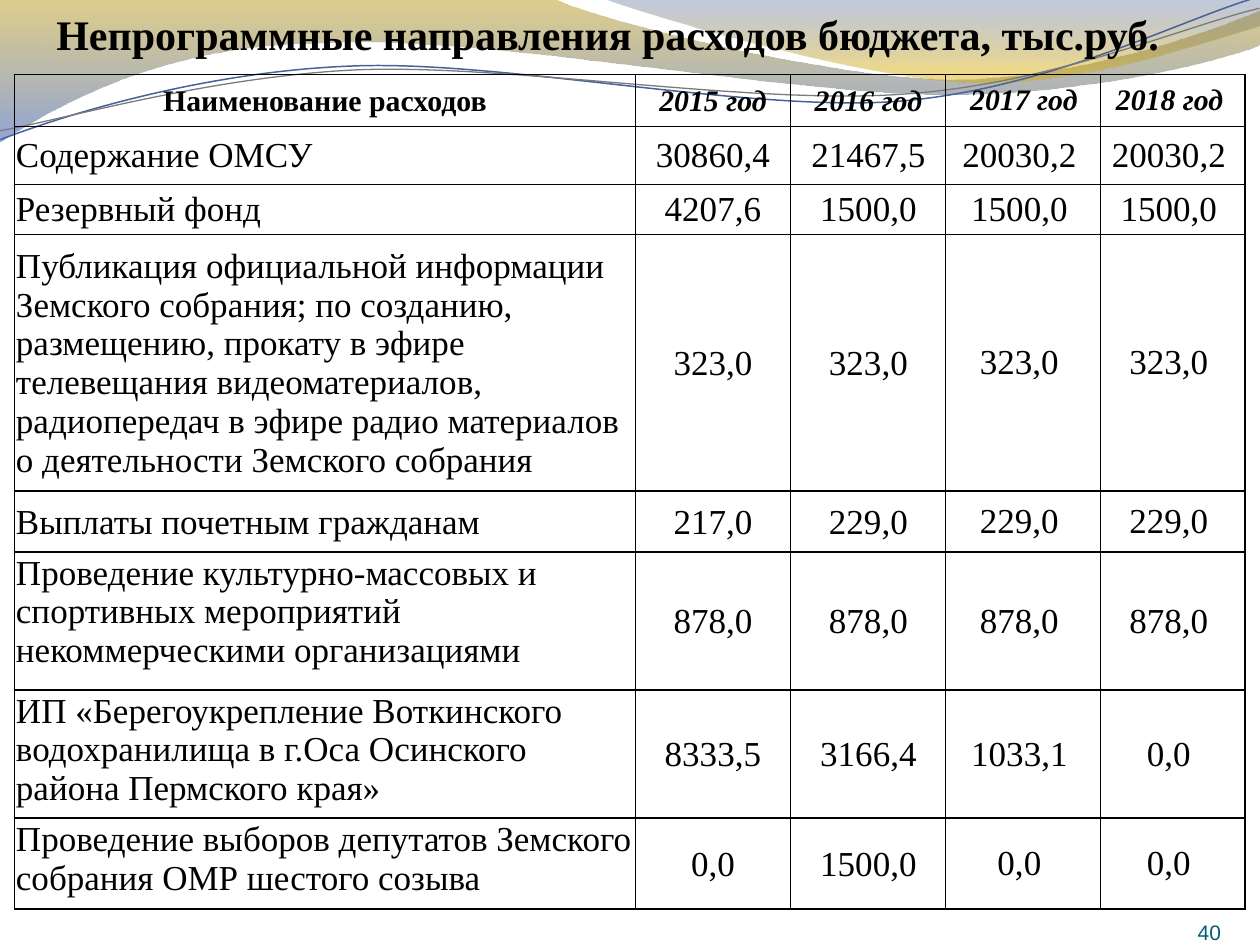
from lxml import etree
from pptx import Presentation
from pptx import util as u
from pptx.dml.color import RGBColor
from pptx.enum import text
from pptx.oxml.ns import qn

SCALE = 914400 / 126
SERIF = "Times New Roman"
CENTER, LEFT, RIGHT = text.PP_ALIGN.CENTER, text.PP_ALIGN.LEFT, text.PP_ALIGN.RIGHT
MIDDLE, TOP, BOTTOM = text.MSO_ANCHOR.MIDDLE, text.MSO_ANCHOR.TOP, text.MSO_ANCHOR.BOTTOM

WAVES = [
    ([(0, -1), (554, -1),
      (600, 21, 837, 79, 955, 79), (1075, 79, 1207, 33, 1260, 11),
      (1261, 45),
      (1239, 55, 1096, 96, 940, 94), (784, 94, 481, 35, 324, 43),
      (163, 44, 58, 105, -1, 142), (0, -1)],
     [(0, "B69000", 45), (1, "3359B7", 55)]),
    ([(604, -1),
      (641, 14, 859, 78, 969, 82), (1079, 87, 1211, 40, 1260, 26),
      (1260, 0), (604, -1)],
     [(0, "324C8D", 30), (0.8, "D9AC00", 45)]),
]
STRANDS = [
    ([(-2, 110), (58, 90, 199, 52, 350, 53),
      (499, 53, 745, 118, 896, 114), (1049, 109, 1184, 45, 1260, 27)],
     "48609B", 0.85),
    ([(-2, 101), (57, 94, 207, 57, 357, 57),
      (509, 58, 750, 111, 902, 107), (1052, 104, 1187, 52, 1262, 38)],
     "7A7A7A", 0.75),
]
COLS = [621, 155, 156, 155, 144]
ROWS = [52, 58, 50, 257, 61, 138, 128, 91]
DATA = [
    ["Наименование расходов", "2015 год", "2016 год", "2017 год", "2018 год "],
    ["Содержание ОМСУ", "30860,4", "21467,5", "20030,2", "20030,2"],
    ["Резервный фонд", "4207,6", "1500,0", "1500,0", "1500,0"],
    ["Публикация официальной информации Земского собрания; по созданию, "
     "размещению, прокату в эфире телевещания видеоматериалов, радиопередач "
     "в эфире радио материалов о деятельности Земского собрания",
     "323,0", "323,0", "323,0", "323,0"],
    ["Выплаты почетным гражданам", "217,0", "229,0", "229,0", "229,0"],
    ["Проведение культурно-массовых и спортивных мероприятий "
     "некоммерческими организациями", "878,0", "878,0", "878,0", "878,0"],
    ["ИП «Берегоукрепление Воткинского водохранилища в г.Оса Осинского "
     "района Пермского края»", "8333,5", "3166,4", "1033,1", "0,0"],
    ["Проведение выборов депутатов Земского собрания ОМР шестого созыва",
     "0,0", "1500,0", "0,0", "0,0"],
]


def px(n):
    return u.Emu(round(n * SCALE))


def rgb(value):
    return RGBColor.from_string(value)


def set_all(obj, values):
    for name, value in values.items():
        setattr(obj, name, value)


def write(p, words, align, color, **fmt):
    p.alignment = align
    r = p.add_run()
    r.text = words
    set_all(r.font, fmt)
    r.font.color.rgb = rgb(color)


def add_curve(shapes, box, steps, close):
    x, y = box
    pts = [(px(x + step[k]), px(y + step[k + 1]))
           for step in steps for k in range(0, len(step), 2)]
    fb = shapes.build_freeform(*pts[0], scale=1.0)
    fb.add_line_segments(pts[1:], close=close)
    sp = fb.convert_to_shape()
    sp.shadow.inherit = False
    lines = iter(list(sp._element.iter(qn("a:lnTo"))))
    for step in steps[1:]:
        ln = next(lines)
        if len(step) == 6:
            bez = etree.Element(qn("a:cubicBezTo"))
            ln.addprevious(bez)
            for part in (ln, next(lines), next(lines)):
                bez.append(part[0])
                part.getparent().remove(part)
    return sp


def add_waves(s, box):
    for steps, stops in WAVES:
        sp = add_curve(s.shapes, box, steps, True)
        sp.line.fill.background()
        sp.fill.gradient()
        sp.fill.gradient_angle = 270
        for stop, (pos, color, alpha) in zip(sp.fill.gradient_stops, stops):
            stop.position = pos
            stop.color.rgb = rgb(color)
        clrs = sp._element.spPr.iter(qn("a:srgbClr"))
        for clr, (pos, color, alpha) in zip(clrs, stops):
            etree.SubElement(clr, qn("a:alpha"), val=str(alpha * 1000))


def add_strands(s, box):
    grp = s.shapes.add_group_shape()
    for steps, color, width in STRANDS:
        sp = add_curve(grp.shapes, box, steps, False)
        sp.rotation = 357.3
        sp.fill.background()
        sp.line.color.rgb = rgb(color)
        sp.line.width = u.Pt(width)


def add_label(s, box, words, align, color, frame, **fmt):
    tf = s.shapes.add_textbox(*map(px, box)).text_frame
    set_all(tf, {"word_wrap": True, **frame})
    write(tf.paragraphs[0], words, align, color, **fmt)


def set_borders(cell, widths):
    tcPr = cell._tc.get_or_add_tcPr()
    for i, (side, width) in enumerate(zip("LRTB", widths)):
        ln = etree.Element(qn(f"a:ln{side}"), w=str(u.Pt(width)))
        fill = etree.SubElement(ln, qn("a:solidFill"))
        etree.SubElement(fill, qn("a:srgbClr"), val="000000")
        tcPr.insert(i, ln)


def add_budget_table(s, box):
    x, y = box
    tbl = s.shapes.add_table(len(ROWS), len(COLS), px(x), px(y),
                             px(sum(COLS)), px(sum(ROWS))).table
    set_all(tbl, {"first_row": False, "horz_banding": False})
    for col, width in zip(tbl.columns, COLS):
        col.width = px(width)
    for row, height in zip(tbl.rows, ROWS):
        row.height = px(height)
    for i, values in enumerate(DATA):
        for j, words in enumerate(values):
            cell = tbl.cell(i, j)
            head = i == 0
            set_all(cell, {
                "margin_left": px(2), "margin_bottom": 0,
                "margin_top": px(1 if j > 2 else 2),
                "margin_right": px(10 if i > 0 and j > 2 else 1),
                "vertical_anchor": TOP if j == 0 and i > 4 else MIDDLE,
            })
            write(cell.text_frame.paragraphs[0], words,
                  CENTER if head or j else LEFT, "000000", name=SERIF,
                  size=u.Pt(17 if head else 20), bold=head, italic=head and j > 0)
            cell.fill.background()
            set_borders(cell, [0.5, 1 if j == len(COLS) - 1 else 0.5,
                               1 if i > 3 else 0.5, 1 if i > 2 else 0.5])


def main():
    prs = Presentation()
    set_all(prs, {"slide_width": px(1260), "slide_height": px(945)})
    s = prs.slides.add_slide(prs.slide_layouts[6])
    add_waves(s, (0, 0))
    add_strands(s, (0, 0))
    add_label(s, (44, 2, 1160, 64),
              "Непрограммные направления расходов бюджета, тыс.руб.",
              LEFT, "000000", {}, name=SERIF, size=u.Pt(24), bold=True)
    add_budget_table(s, (14, 74))
    flush = dict.fromkeys(["margin_left", "margin_top", "margin_right", "margin_bottom"], 0)
    add_label(s, (1116, 895, 105, 50), "40", RIGHT, "045D75",
              {**flush, "vertical_anchor": BOTTOM}, name="Arial", size=u.Pt(12))
    prs.save("out.pptx")


if __name__ == "__main__":
    main()
